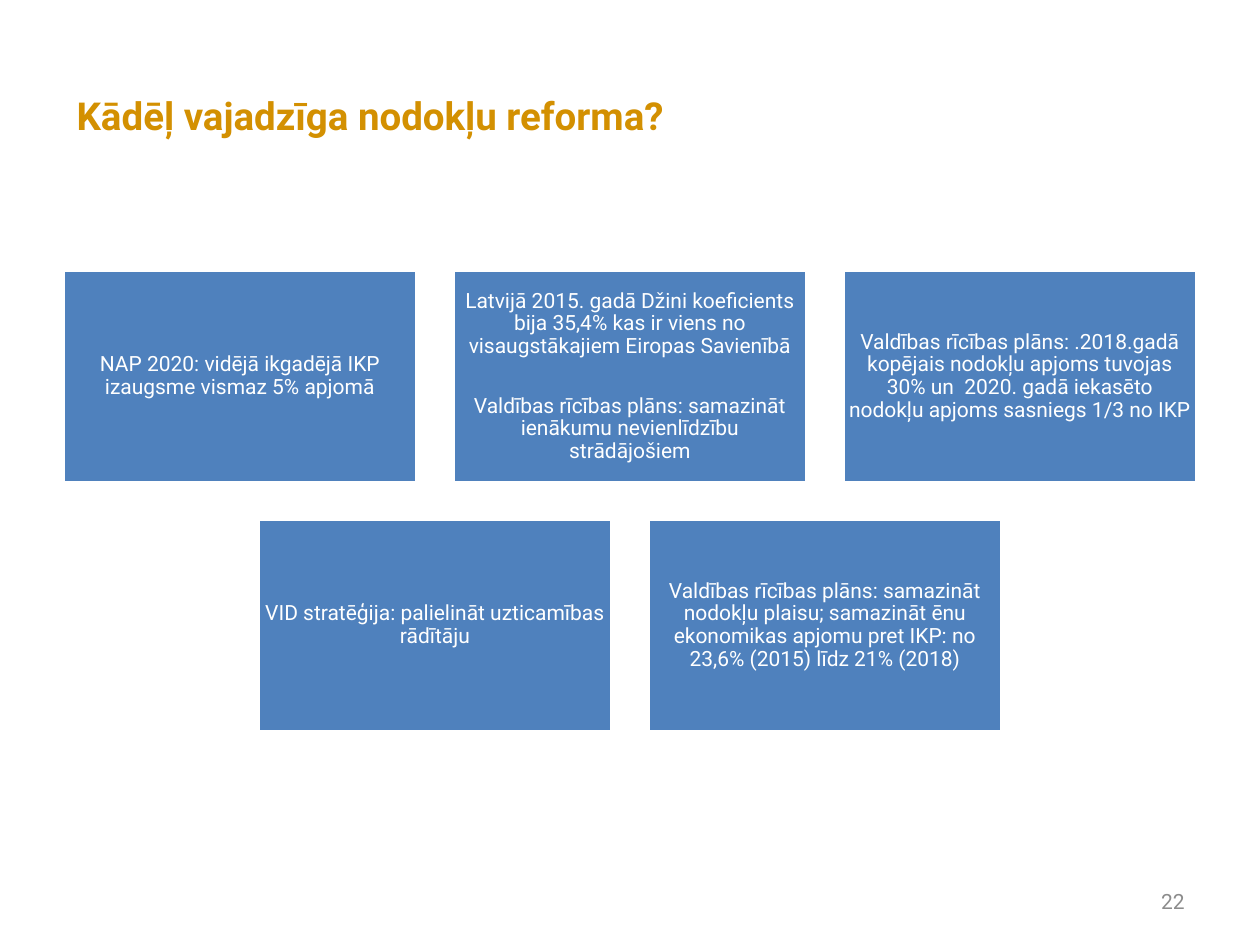
from pptx import Presentation
from pptx.dml.color import RGBColor
from pptx.enum.shapes import MSO_SHAPE
from pptx.enum.text import MSO_ANCHOR, MSO_AUTO_SIZE, PP_ALIGN
from pptx.util import Pt

PX = 914400 // 126
FONT = "Roboto"
COLORS = {"title": "D39001", "number": "8C8C8C", "box": "4F81BD", "white": "FFFFFF"}

BOX_WIDTH, BOX_HEIGHT, GAP = 354, 213, 36
LEFT, TOP = 63, 270
COLUMNS = 3

GOAL_ROWS = [
    [
        ["NAP 2020: vidējā ikgadējā IKP izaugsme vismaz 5% apjomā"],
        [
            "Latvijā 2015. gadā Džini koeficients bija 35,4% kas ir viens no "
            "visaugstākajiem Eiropas Savienībā",
            "Valdības rīcības plāns: samazināt ienākumu nevienlīdzību strādājošiem",
        ],
        [
            "Valdības rīcības plāns: .2018.gadā kopējais nodokļu apjoms tuvojas "
            "30% un  2020. gadā iekasēto nodokļu apjoms sasniegs 1/3 no IKP"
        ],
    ],
    [
        ["VID stratēģija: palielināt uzticamības rādītāju"],
        [
            "Valdības rīcības plāns: samazināt nodokļu plaisu; samazināt ēnu "
            "ekonomikas apjomu pret IKP: no 23,6% (2015) līdz 21% (2018)"
        ],
    ],
]


def px(*lengths):
    return [length * PX for length in lengths]


def color(name):
    return RGBColor.from_string(COLORS[name])


def add_run(paragraph, text, size, color_name, bold=False):
    run = paragraph.add_run()
    run.text = text
    run.font.name = FONT
    run.font.size = Pt(size)
    run.font.bold = bold
    run.font.color.rgb = color(color_name)


def set_title(slide, text):
    title = slide.shapes.title
    title.left, title.top, title.width, title.height = px(64, 86, 784, 59)
    frame = title.text_frame
    frame.auto_size = MSO_AUTO_SIZE.NONE
    frame.vertical_anchor = MSO_ANCHOR.MIDDLE
    paragraph = frame.paragraphs[0]
    paragraph.alignment = PP_ALIGN.LEFT
    add_run(paragraph, text, 22, "title", bold=True)


def add_slide_number(slide, text):
    frame = slide.shapes.add_textbox(*px(903, 876, 294, 50)).text_frame
    frame.word_wrap = True
    frame.vertical_anchor = MSO_ANCHOR.MIDDLE
    paragraph = frame.paragraphs[0]
    paragraph.alignment = PP_ALIGN.RIGHT
    add_run(paragraph, text, 12, "number")


def add_goal_box(slide, left, top, texts):
    shape = slide.shapes.add_shape(
        MSO_SHAPE.RECTANGLE, *px(left, top, BOX_WIDTH, BOX_HEIGHT)
    )
    shape.shadow.inherit = False
    shape.fill.solid()
    shape.fill.fore_color.rgb = color("box")
    shape.line.color.rgb = color("white")
    shape.line.width = Pt(2)
    frame = shape.text_frame
    frame.word_wrap = True
    frame.vertical_anchor = MSO_ANCHOR.MIDDLE
    frame.margin_left = frame.margin_right = 6 * PX
    frame.margin_top = frame.margin_bottom = 6 * PX
    for index, text in enumerate(texts):
        paragraph = frame.add_paragraph() if index else frame.paragraphs[0]
        paragraph.alignment = PP_ALIGN.CENTER
        paragraph.line_spacing = 0.9
        if index:
            paragraph.space_before = Pt(21)
        add_run(paragraph, text, 12, "white")


def add_goal_rows(slide):
    step = BOX_WIDTH + GAP
    for row, goals in enumerate(GOAL_ROWS):
        row_left = LEFT + (COLUMNS - len(goals)) * step // 2
        row_top = TOP + row * (BOX_HEIGHT + GAP)
        for column, texts in enumerate(goals):
            add_goal_box(slide, row_left + column * step, row_top, texts)


def main():
    presentation = Presentation()
    presentation.slide_width, presentation.slide_height = px(1260, 945)
    slide = presentation.slides.add_slide(presentation.slide_layouts[5])
    set_title(slide, "Kādēļ vajadzīga nodokļu reforma?")
    add_slide_number(slide, "22")
    add_goal_rows(slide)
    presentation.save("out.pptx")


if __name__ == "__main__":
    main()
